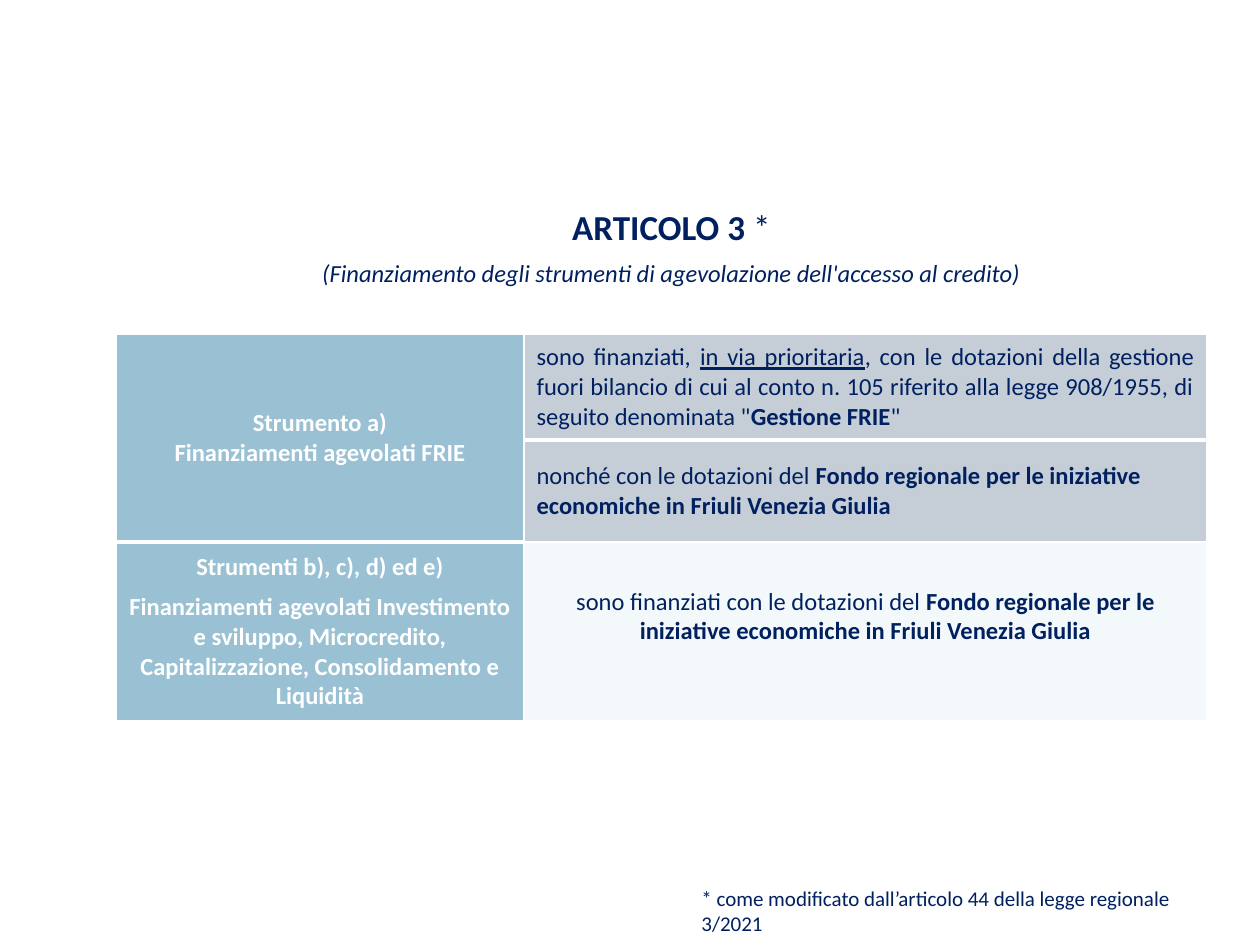
from lxml.etree import SubElement
from pptx import Presentation
from pptx.dml.color import RGBColor
from pptx.enum.text import MSO_ANCHOR, PP_ALIGN
from pptx.oxml import parse_xml
from pptx.oxml.ns import nsdecls
from pptx.util import Pt

PX = 914400 / 126
NAVY, WHITE, BLUE, GREY, PALE = "002060", "FFFFFF", "99C1D3", "C5CED7", "F3F9FA"
LEFT, CENTER, JUSTIFY = PP_ALIGN.LEFT, PP_ALIGN.CENTER, PP_ALIGN.JUSTIFY
FUND = ("Fondo regionale per le iniziative economiche in Friuli Venezia Giulia", "b")

TITLE = [
    ([("ARTICOLO 3 ", "b"), ("*", "")], 20),
    ([("(Finanziamento degli strumenti di agevolazione dell'accesso al credito)", "i")], 14),
]
NOTE = [("* come modificato dall’articolo 44 della legge regionale 3/2021", "")]
COLS, ROWS = [408, 683], [106, 102, 179]
CELLS = [
    dict(at=(0, 0), fill=BLUE, color=WHITE, align=CENTER, bottom=3, paras=[
        [("Strumento a)", "b")],
        [("Finanziamenti agevolati FRIE", "b")]]),
    dict(at=(0, 1), fill=GREY, align=JUSTIFY, bottom=3, paras=[[
        ("sono finanziati, ", ""), ("in via prioritaria", "u"),
        (", con le dotazioni della gestione fuori bilancio di cui al conto n. 105 "
         "riferito alla legge 908/1955, di seguito denominata \"", ""),
        ("Gestione FRIE", "b"), ("\"", "")]]),
    dict(at=(1, 0), fill=BLUE, bottom=3, paras=[]),
    dict(at=(1, 1), fill=GREY, paras=[[("nonché con le dotazioni del ", ""), FUND]]),
    dict(at=(2, 0), fill=BLUE, color=WHITE, align=CENTER, after=6, paras=[
        [("Strumenti b), c), d) ed e)", "b")],
        [("Finanziamenti agevolati Investimento e sviluppo, Microcredito, "
          "Capitalizzazione, Consolidamento e Liquidità", "b")]]),
    dict(at=(2, 1), fill=PALE, align=CENTER, pad=36, paras=[
        [("sono finanziati con le dotazioni del ", ""), FUND]]),
]


def px(n):
    return round(n * PX)


def rgb(h):
    return RGBColor.from_string(h)


def write(tf, i, runs, size=14, color=NAVY, align=LEFT, after=0):
    p = tf.add_paragraph() if i else tf.paragraphs[0]
    p.alignment, p.space_after = align, Pt(after)
    for text, style in runs:
        r = p.add_run()
        r.text = text
        f = r.font
        f.name, f.size, f.color.rgb = "Calibri", Pt(size), rgb(color)
        f.bold, f.italic, f.underline = "b" in style, "i" in style, "u" in style


def text_box(s, x, y, w, h):
    tf = s.shapes.add_textbox(px(x), px(y), px(w), px(h)).text_frame
    tf.word_wrap = True
    return tf


def borders(cell, bottom):
    pr = cell._tc.get_or_add_tcPr()
    for i, side in enumerate("LRTB"):
        width = Pt(bottom if side == "B" else 1)
        ln = parse_xml(f'<a:ln{side} {nsdecls("a")} w="{width}"><a:solidFill/></a:ln{side}>')
        SubElement(ln[0], ln[0].tag.replace("solidFill", "srgbClr"), val=WHITE)
        pr.insert(i, ln)


def fill_cell(table, at, fill, paras, bottom=1, pad=6, **fmt):
    cell = table.cell(*at)
    cell.fill.solid()
    cell.fill.fore_color.rgb = rgb(fill)
    borders(cell, bottom)
    cell.vertical_anchor = MSO_ANCHOR.MIDDLE
    cell.margin_bottom = px(pad)
    for i, runs in enumerate(paras):
        write(cell.text_frame, i, runs, **fmt)


def main():
    """Build the slide on the financing of the credit instruments."""
    prs = Presentation()
    prs.slide_width, prs.slide_height = px(1260), px(945)
    s = prs.slides.add_slide(prs.slide_layouts[6])

    tf = text_box(s, 116, 199, 1111, 131)
    for i, (runs, size) in enumerate(TITLE):
        write(tf, i, runs, size=size, align=CENTER, after=6)

    table = s.shapes.add_table(len(ROWS), len(COLS), px(116), px(334),
                               px(sum(COLS)), px(sum(ROWS))).table
    for col, w in zip(table.columns, COLS):
        col.width = px(w)
    for row, h in zip(table.rows, ROWS):
        row.height = px(h)
    table.cell(0, 0).merge(table.cell(1, 0))
    for cell in CELLS:
        fill_cell(table, **cell)

    write(text_box(s, 689, 879, 546, 39), 0, NOTE, size=12)
    prs.save("out.pptx")


if __name__ == "__main__":
    main()
